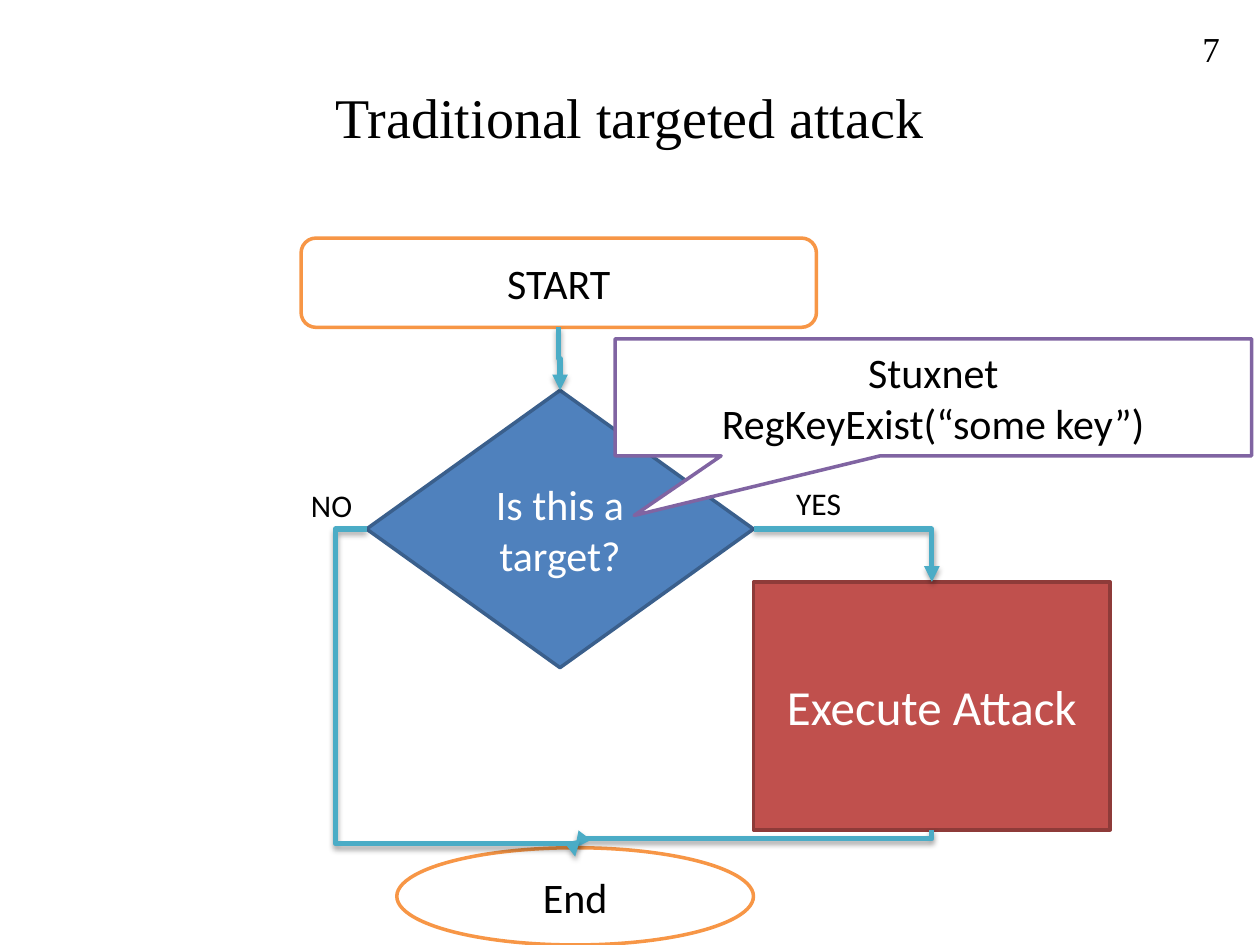
import pptx
import pptx.dml.color
import pptx.enum.shapes
import pptx.enum.text
import pptx.oxml
import pptx.oxml.ns
import pptx.util

Cm = pptx.util.Cm
Pt = pptx.util.Pt
Shape = pptx.enum.shapes.MSO_SHAPE
Align = pptx.enum.text.PP_ALIGN
Anchor = pptx.enum.text.MSO_ANCHOR
qualified = pptx.oxml.ns.qn

SERIF, SANS = "Times New Roman", "Calibri"
BLACK, WHITE, TEAL = "000000", "FFFFFF", "4BACC6"

TITLE = ("Traditional targeted attack", (1.27, 0.76, 22.86, 3.18))
NODES = {
    "start": (Shape.ROUNDED_RECTANGLE, (6.07, 4.8, 10.39, 1.8),
              "START", 24, BLACK, WHITE, "F79646"),
    "decision": (Shape.DIAMOND, (7.39, 7.87, 7.8, 5.59),
                 "Is this a target?", 24, WHITE, "4F81BD", "3A5F8C"),
    "attack": (Shape.RECTANGLE, (15.19, 11.73, 7.19, 5),
               "Execute Attack", 28, WHITE, "C0504D", "8E3B39"),
    "end": (Shape.OVAL, (8, 17.09, 7.19, 1.96),
            "End", 24, BLACK, WHITE, "F79646"),
}
CALLOUT = (Shape.RECTANGULAR_CALLOUT, (12.4, 6.83, 12.83, 2.36),
           "Stuxnet\nRegKeyExist(“some key”)", 24, BLACK, WHITE, "8064A2")
CALLOUT_TIP = (-0.47, 1.01)
ARROWS = [
    ("start", "bottom", "decision", "top", 0, "bentConnector3", True, ()),
    ("decision", "right", "attack", "top", 0, "bentConnector2", False, ()),
    ("attack", "bottom", "end", "top", 0, "bentConnector3", True, ()),
    ("decision", "left", "end", "top", 0.18, "bentConnector4", False, (-0.15, 0.96)),
]
LABELS = [
    ("NO", (6.02, 9.68, 1.4, 1.02), 18, SANS, Align.LEFT, Anchor.TOP),
    ("YES", (15.8, 9.63, 1.9, 1.02), 18, SANS, Align.LEFT, Anchor.TOP),
    ("7", (18.92, 0.46, 5.92, 1.02), 20, SERIF, Align.RIGHT, Anchor.MIDDLE),
]
SIDES = {"top": (0.5, 0), "bottom": (0.5, 1), "left": (0, 0.5), "right": (1, 0.5)}
SHADOW = (
    f'<a:effectLst {pptx.oxml.ns.nsdecls("a")}>'
    '<a:outerShdw blurRad="40000" dist="23000" dir="5400000" rotWithShape="0">'
    '<a:srgbClr val="000000"><a:alpha val="35000"/></a:srgbClr>'
    '</a:outerShdw></a:effectLst>'
)


def colour(value):
    return pptx.dml.color.RGBColor.from_string(value)


def lengths(values):
    return [Cm(value) for value in values]


def write(shape, text, size, ink, font=SANS, align=Align.CENTER,
          anchor=Anchor.MIDDLE, wrap=True):
    frame = shape.text_frame
    frame.text = text
    for name, value in {"word_wrap": wrap, "vertical_anchor": anchor}.items():
        setattr(frame, name, value)
    for para in frame.paragraphs:
        para.alignment = align
        for span in para.runs:
            for name, value in {"size": Pt(size), "name": font}.items():
                setattr(span.font, name, value)
            span.font.color.rgb = colour(ink)


def add_node(page, kind, place, text, size, ink, fill, edge):
    node = page.shapes.add_shape(kind, *lengths(place))
    node.shadow.inherit = False
    node.fill.solid()
    node.fill.fore_color.rgb = colour(fill)
    node.line.color.rgb = colour(edge)
    node.line.width = Pt(2)
    write(node, text, size, ink)
    return node


def port(name, side):
    left, top, width, height = NODES[name][1]
    across, down = SIDES[side]
    return left + across * width, top + down * height


def add_arrow(page, source, exit_side, target, entry_side, overlap,
              route, vertical, bends):
    begin = port(source, exit_side)
    entry = port(target, entry_side)
    finish = (entry[0], entry[1] + overlap)
    if vertical:
        middle = [(one + two) / 2 for one, two in zip(begin, finish)]
        begin, finish = [
            (middle[0] + y - middle[1], middle[1] - x + middle[0])
            for x, y in (begin, finish)
        ]
    arrow = page.shapes.add_connector(
        pptx.enum.shapes.MSO_CONNECTOR.ELBOW, *lengths(begin + finish))
    arrow.line.color.rgb = colour(TEAL)
    arrow.line.width = Pt(3)
    properties = arrow._element.spPr
    if vertical:
        properties.find(qualified("a:xfrm")).set("rot", "5400000")
    geometry = properties.find(qualified("a:prstGeom"))
    geometry.set("prst", route)
    adjustments = geometry.find(qualified("a:avLst"))
    for number, bend in enumerate(bends, 1):
        guide = pptx.oxml.parse_xml(
            f'<a:gd {pptx.oxml.ns.nsdecls("a")} name="adj{number}" '
            f'fmla="val {round(bend * 100000)}"/>')
        adjustments.append(guide)
    head = pptx.oxml.parse_xml(
        f'<a:tailEnd {pptx.oxml.ns.nsdecls("a")} type="triangle"/>')
    properties.find(qualified("a:ln")).append(head)
    properties.append(pptx.oxml.parse_xml(SHADOW))


def main():
    deck = pptx.Presentation()
    deck.slide_width, deck.slide_height = Cm(25.4), Cm(19.05)
    page = deck.slides.add_slide(deck.slide_layouts[5])

    title = page.shapes.title
    text, place = TITLE
    for name, value in zip(("left", "top", "width", "height"), lengths(place)):
        setattr(title, name, value)
    write(title, text, 32, BLACK, SERIF)

    for node in NODES.values():
        add_node(page, *node)
    for arrow in ARROWS:
        add_arrow(page, *arrow)
    for text, place, size, font, align, anchor in LABELS:
        box = page.shapes.add_textbox(*lengths(place))
        write(box, text, size, BLACK, font, align, anchor, wrap=False)
    callout = add_node(page, *CALLOUT)
    for index, value in enumerate(CALLOUT_TIP):
        callout.adjustments[index] = value

    deck.save("out.pptx")


if __name__ == "__main__":
    main()
